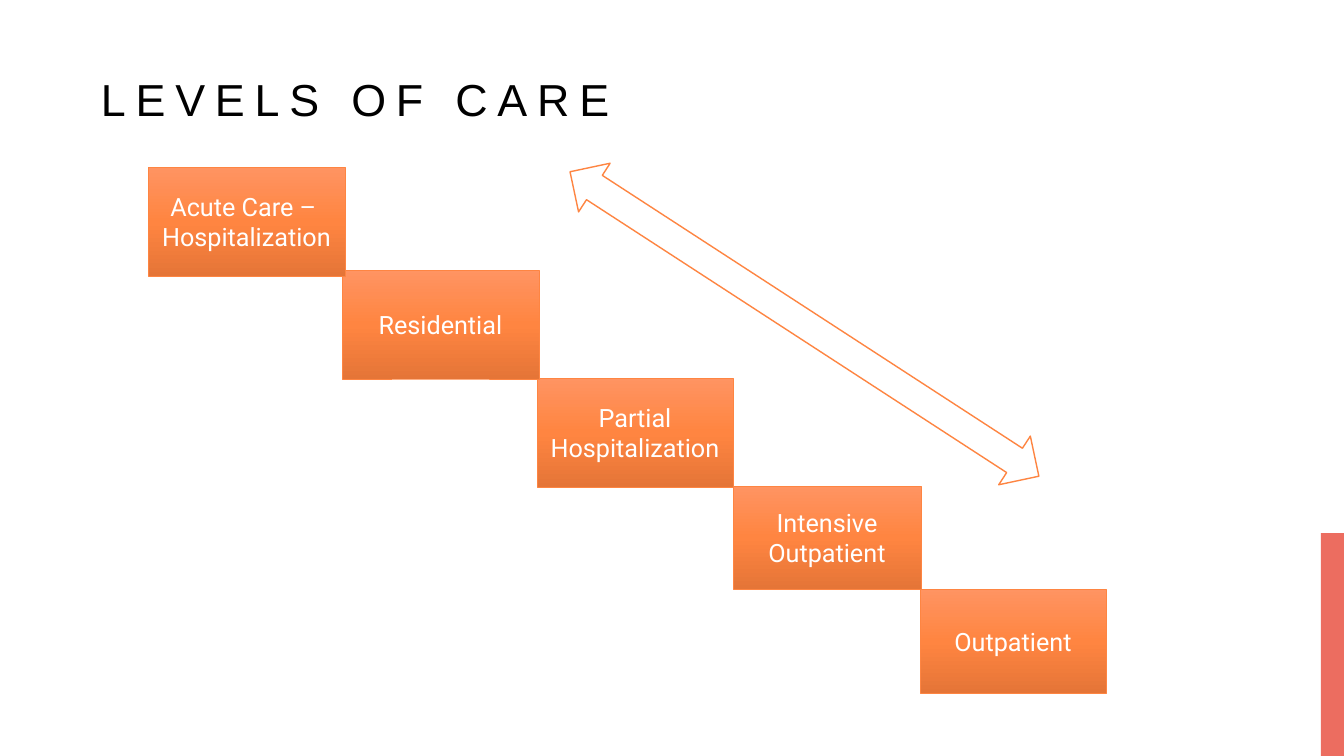
from copy import deepcopy
from dataclasses import dataclass

from pptx import Presentation
from pptx.dml.color import RGBColor
from pptx.enum.shapes import MSO_SHAPE
from pptx.enum.text import MSO_ANCHOR, PP_ALIGN
from pptx.oxml.ns import qn
from pptx.util import Pt

EMU_PER_PX = 914400 / 100.8
SLIDE_WIDTH, SLIDE_HEIGHT = 1344, 756


@dataclass(frozen=True)
class Theme:
    ink: str = "000000"
    paper: str = "FFFFFF"
    accent: str = "EC6D60"
    outline: str = "FE8542"
    gradient: tuple = ((0, "FF9462"), (0.5, "FF8541"), (1, "E57537"))
    title_font: str = "Arial"
    level_font: str = "Roboto"
    title_size: int = 32
    level_size: int = 18
    title_tracking: int = 7


THEME = Theme()

LEVELS = (
    ("Acute Care – \nHospitalization", (0, 0, 197, 109)),
    ("Residential", (194, 103, 197, 109)),
    ("Partial Hospitalization", (389, 211, 196, 109)),
    ("Intensive Outpatient", (585, 319, 188, 103)),
    ("Outpatient", (772, 422, 186, 104)),
)


def px(*lengths):
    return [round(length * EMU_PER_PX) for length in lengths]


def rgb(colour):
    return RGBColor.from_string(colour)


def add_plain_shape(slide, preset, box, fill=None, line=None, weight=1):
    shape = slide.shapes.add_shape(preset, *px(*box))
    shape.shadow.inherit = False
    if fill:
        shape.fill.solid()
        shape.fill.fore_color.rgb = rgb(fill)
    if line:
        shape.line.color.rgb = rgb(line)
        shape.line.width = Pt(weight)
    else:
        shape.line.fill.background()
    return shape


def style_text(paragraph, font_name, size, colour):
    for run in paragraph.runs:
        run.font.name = font_name
        run.font.size = Pt(size)
        run.font.color.rgb = rgb(colour)


def fill_gradient(shape):
    shape.fill.gradient()
    shape.fill.gradient_angle = 270
    stop_list = shape._element.spPr.find(qn("a:gradFill")).find(qn("a:gsLst"))
    stop_list.append(deepcopy(stop_list[-1]))
    for stop, (position, colour) in zip(shape.fill.gradient_stops, THEME.gradient):
        stop.position = position
        stop.color.rgb = rgb(colour)


def add_title(slide, box, wording):
    title = slide.shapes.add_textbox(*px(*box))
    frame = title.text_frame
    frame.word_wrap = True
    frame.vertical_anchor = MSO_ANCHOR.BOTTOM
    frame.text = wording
    heading = frame.paragraphs[0]
    heading.line_spacing = 1.2
    style_text(heading, THEME.title_font, THEME.title_size, THEME.ink)
    for run in heading.runs:
        run._r.get_or_add_rPr().set("spc", str(THEME.title_tracking * 100))


def add_level(slide, box, wording):
    level = add_plain_shape(slide, MSO_SHAPE.RECTANGLE, box, line=THEME.outline, weight=0.5)
    fill_gradient(level)
    frame = level.text_frame
    frame.word_wrap = True
    frame.vertical_anchor = MSO_ANCHOR.MIDDLE
    frame.text = wording
    for paragraph in frame.paragraphs:
        paragraph.alignment = PP_ALIGN.CENTER
        style_text(paragraph, THEME.level_font, THEME.level_size, THEME.paper)


def add_staircase(slide, box):
    left, top, width, height = box
    for wording, (x, y, level_width, level_height) in reversed(LEVELS):
        add_level(slide, (left + x, top + y, level_width, level_height), wording)
    arrow_box = (left + width * 2 // 5 - 6, top + 128, 559, 58)
    transition = add_plain_shape(
        slide, MSO_SHAPE.LEFT_RIGHT_ARROW, arrow_box, THEME.paper, THEME.outline
    )
    transition.rotation = 33


def build_levels_of_care(slide, box):
    left, top, width, height = box
    accent_box = (left + width - 23, top + height - 223, 23, 223)
    add_plain_shape(slide, MSO_SHAPE.RECTANGLE, accent_box, THEME.accent)
    add_title(slide, (left + 91, top + 22, 1142, 108), "LEVELS OF CARE")
    add_staircase(slide, (left + 148, top + 167, 958, 526))


def main():
    presentation = Presentation()
    presentation.slide_width, presentation.slide_height = px(SLIDE_WIDTH, SLIDE_HEIGHT)
    slide = presentation.slides.add_slide(presentation.slide_layouts[6])
    build_levels_of_care(slide, (0, 0, SLIDE_WIDTH, SLIDE_HEIGHT))
    presentation.save("out.pptx")


if __name__ == "__main__":
    main()
